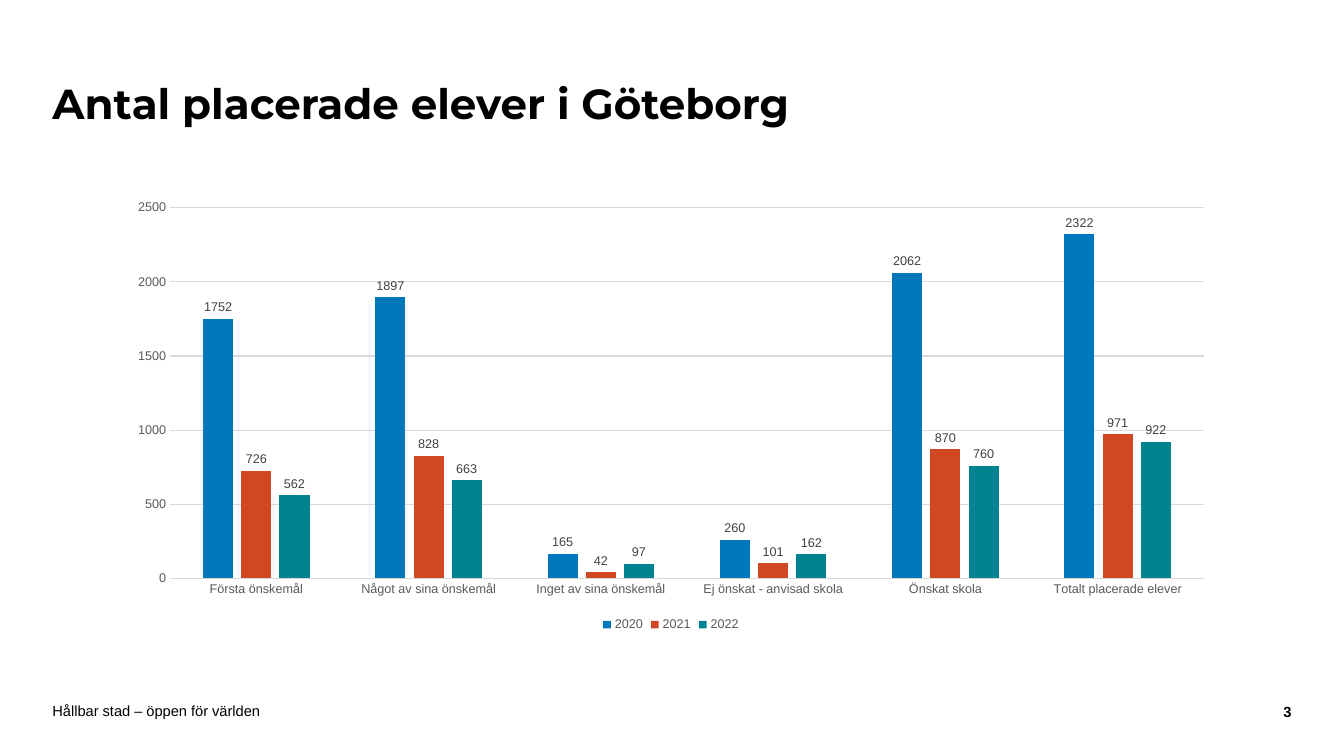
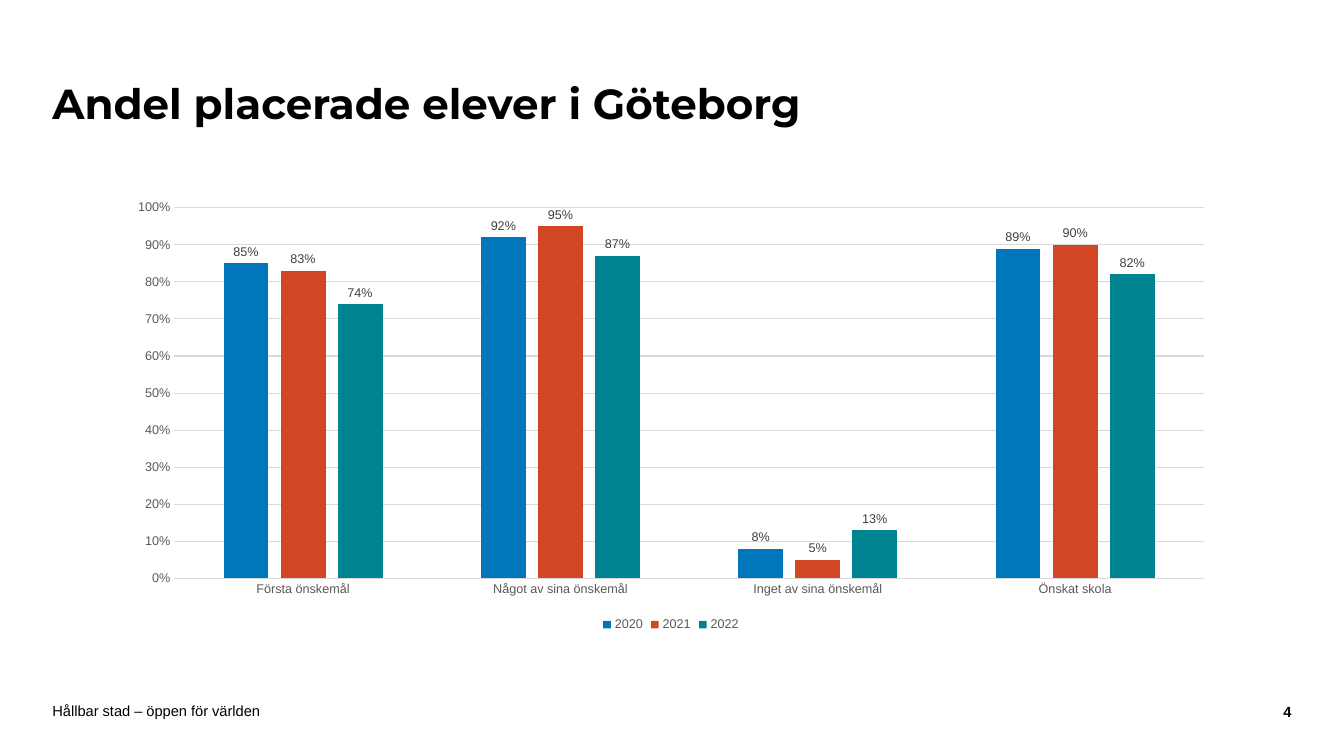
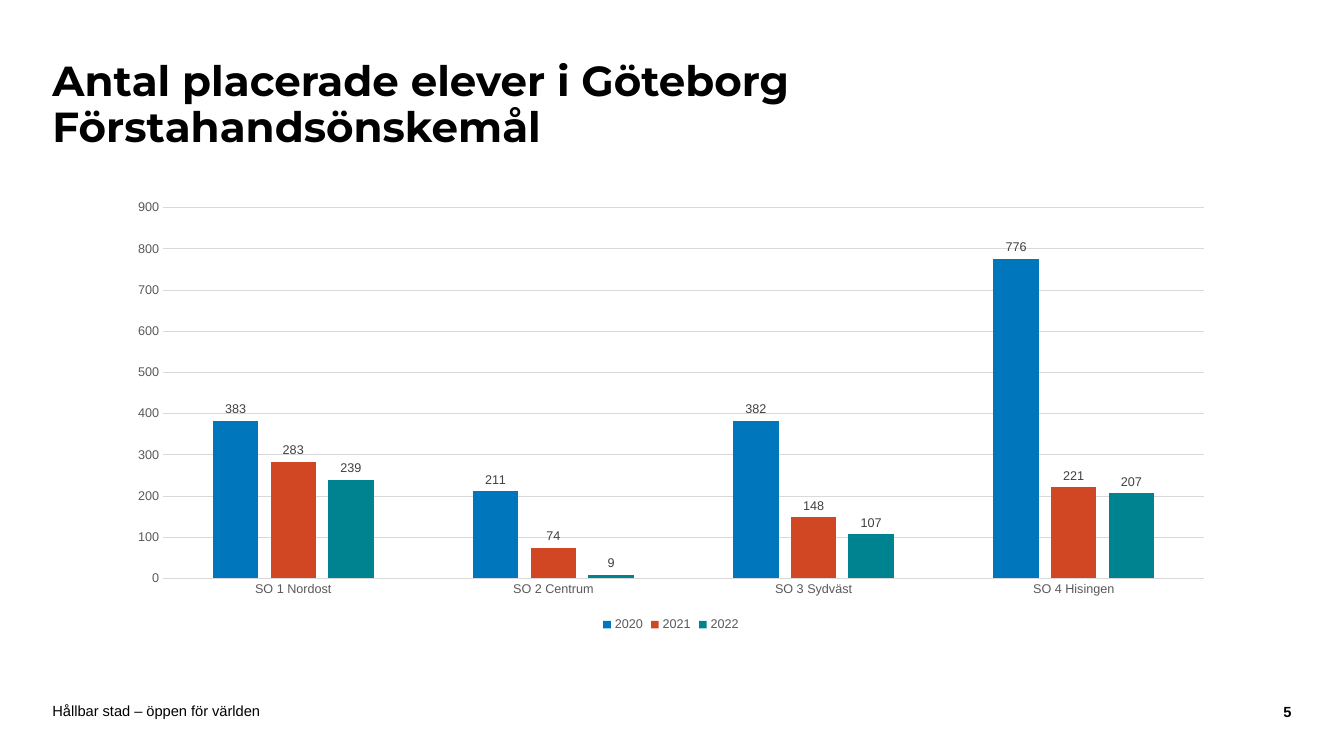
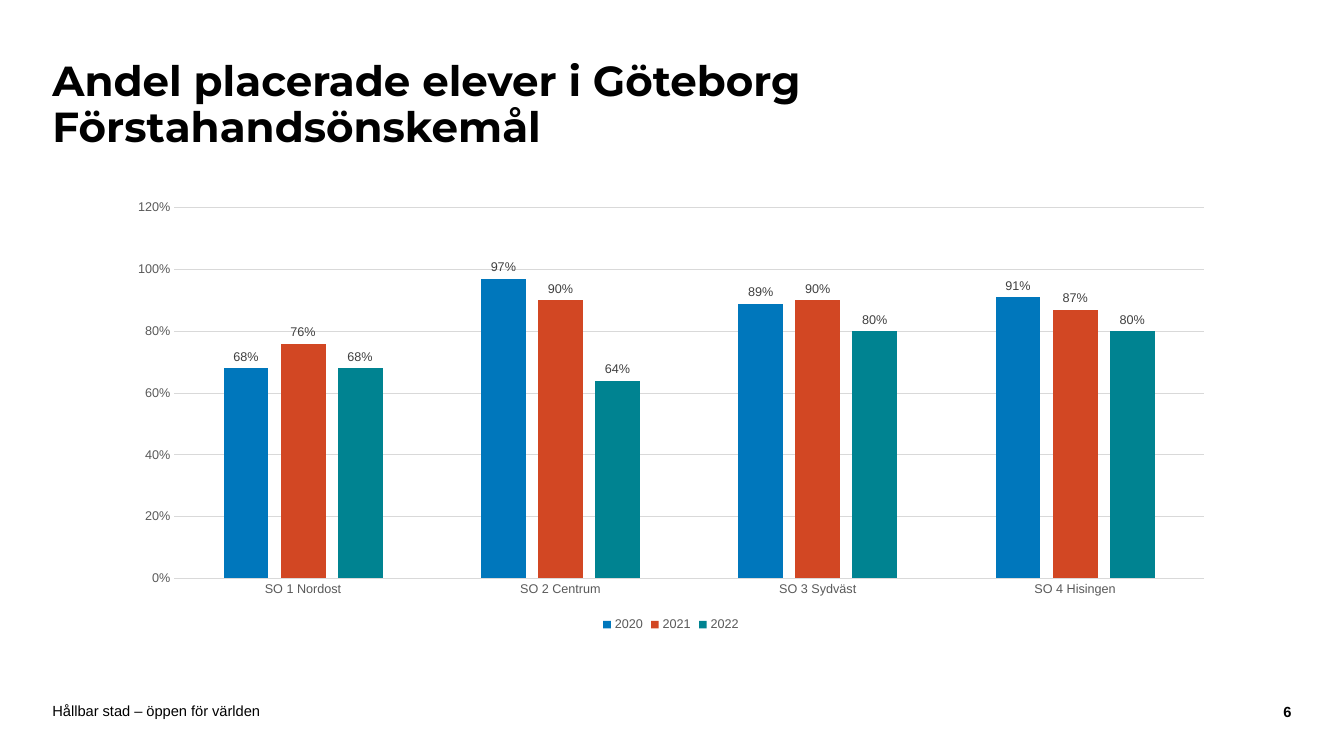
from pptx import Presentation
from pptx.chart.data import CategoryChartData
from pptx.dml.color import RGBColor
from pptx.enum.chart import XL_CHART_TYPE, XL_LABEL_POSITION, XL_LEGEND_POSITION, XL_TICK_MARK
from pptx.enum.text import MSO_ANCHOR, PP_ALIGN
from pptx.util import Inches, Pt

CLUSTERED = XL_CHART_TYPE.COLUMN_CLUSTERED
OUTSIDE_END = XL_LABEL_POSITION.OUTSIDE_END
LEGEND_BOTTOM = XL_LEGEND_POSITION.BOTTOM
NO_TICKS = XL_TICK_MARK.NONE
MIDDLE = MSO_ANCHOR.MIDDLE
LEFT, RIGHT = PP_ALIGN.LEFT, PP_ALIGN.RIGHT

COLORS = {
    "text": "000000",
    "axis": "595959",
    "label": "404040",
    "grid": "D9D9D9",
    "2020": "0077BC",
    "2021": "D24723",
    "2022": "008391",
}
FOOTER = "Hållbar stad – öppen för världen"
FIRST_SLIDE_NUMBER = 3
AREAS = ["SO 1 Nordost", "SO 2 Centrum", "SO 3 Sydväst", "SO 4 Hisingen"]

COUNT = {"number_format": "General"}
SHARE = {"number_format": "0%"}

SLIDES = [
    {
        "title": "Antal placerade elever i Göteborg",
        "categories": ["Första önskemål", "Något av sina önskemål", "Inget av sina önskemål",
                       "Ej önskat - anvisad skola", "Önskat skola", "Totalt placerade elever"],
        "values": {
            "2020": [1752, 1897, 165, 260, 2062, 2322],
            "2021": [726, 828, 42, 101, 870, 971],
            "2022": [562, 663, 97, 162, 760, 922],
        },
        "scale": {"maximum_scale": 2500, "major_unit": 500},
        "format": COUNT,
    },
    {
        "title": "Andel placerade elever i Göteborg",
        "categories": ["Första önskemål", "Något av sina önskemål", "Inget av sina önskemål",
                       "Önskat skola"],
        "values": {
            "2020": [0.85, 0.92, 0.08, 0.89],
            "2021": [0.83, 0.95, 0.05, 0.9],
            "2022": [0.74, 0.87, 0.13, 0.82],
        },
        "scale": {"maximum_scale": 1, "major_unit": 0.1},
        "format": SHARE,
    },
    {
        "title": "Antal placerade elever i Göteborg\nFörstahandsönskemål",
        "categories": AREAS,
        "values": {
            "2020": [383, 211, 382, 776],
            "2021": [283, 74, 148, 221],
            "2022": [239, 9, 107, 207],
        },
        "scale": {"maximum_scale": 900, "major_unit": 100},
        "format": COUNT,
    },
    {
        "title": "Andel placerade elever i Göteborg\nFörstahandsönskemål",
        "categories": AREAS,
        "values": {
            "2020": [0.68, 0.97, 0.89, 0.91],
            "2021": [0.76, 0.9, 0.9, 0.87],
            "2022": [0.68, 0.64, 0.8, 0.8],
        },
        "scale": {"maximum_scale": 1.2, "major_unit": 0.2},
        "format": SHARE,
    },
]


def style_font(font, size, color, name="Arial", bold=False):
    font.size, font.name, font.bold = Pt(size), name, bold
    font.color.rgb = RGBColor.from_string(COLORS[color])


def add_text(slide, text, box, size, name="Arial", bold=False, align=LEFT, padding=0, spacing=1.0):
    """Add one vertically centred paragraph; padding is the top and bottom inset in inches."""
    frame = slide.shapes.add_textbox(*map(Inches, box)).text_frame
    frame.word_wrap = True
    frame.vertical_anchor = MIDDLE
    frame.margin_left = frame.margin_right = 0
    frame.margin_top = frame.margin_bottom = Inches(padding)
    paragraph = frame.paragraphs[0]
    paragraph.text = text
    paragraph.alignment = align
    paragraph.line_spacing = spacing
    for run in paragraph.runs:
        style_font(run.font, size, "text", name, bold)


prs = Presentation()
prs.slide_width, prs.slide_height = Inches(13.33), Inches(7.5)
blank = prs.slide_layouts[6]
grid_color = RGBColor.from_string(COLORS["grid"])

for number, content in enumerate(SLIDES, FIRST_SLIDE_NUMBER):
    slide = prs.slides.add_slide(blank)
    add_text(slide, str(number), (12.17, 6.98, 0.64, 0.16), 10.5, bold=True, align=RIGHT)
    add_text(slide, FOOTER, (0.52, 6.97, 9.45, 0.16), 10.5)
    add_text(slide, content["title"], (0.52, 0.42, 10.03, 1.26), 30, "Montserrat", True,
             padding=0.05, spacing=0.9)

    number_format = content["format"]["number_format"]
    data = CategoryChartData(number_format=number_format)
    data.categories = content["categories"]
    for year, values in content["values"].items():
        data.add_series(year, values)
    chart = slide.shapes.add_chart(
        CLUSTERED, Inches(1.15), Inches(1.9), Inches(11.01), Inches(4.41), data).chart
    style_font(chart.font, 10, "text")
    chart.has_title = False
    chart.has_legend = True
    chart.legend.position = LEGEND_BOTTOM
    chart.legend.include_in_layout = False
    style_font(chart.legend.font, 9, "axis")

    category_axis, value_axis = chart.category_axis, chart.value_axis
    for axis in (category_axis, value_axis):
        axis.major_tick_mark = axis.minor_tick_mark = NO_TICKS
        style_font(axis.tick_labels.font, 9, "axis")
    value_axis.has_major_gridlines = True
    for line in (category_axis.format.line, value_axis.major_gridlines.format.line):
        line.color.rgb = grid_color
        line.width = Pt(0.75)
    value_axis.format.line.fill.background()
    value_axis.minimum_scale = 0
    for attribute, value in content["scale"].items():
        setattr(value_axis, attribute, value)
    value_axis.tick_labels.number_format = number_format
    value_axis.tick_labels.number_format_is_linked = False

    plot = chart.plots[0]
    plot.gap_width, plot.overlap, plot.vary_by_categories = 219, -27, False
    for series in plot.series:
        series.format.fill.solid()
        series.format.fill.fore_color.rgb = RGBColor.from_string(COLORS[series.name])
        labels = series.data_labels
        labels.show_value = True
        labels.position = OUTSIDE_END
        labels.number_format = number_format
        labels.number_format_is_linked = False
        style_font(labels.font, 9, "label")

prs.save("out.pptx")
